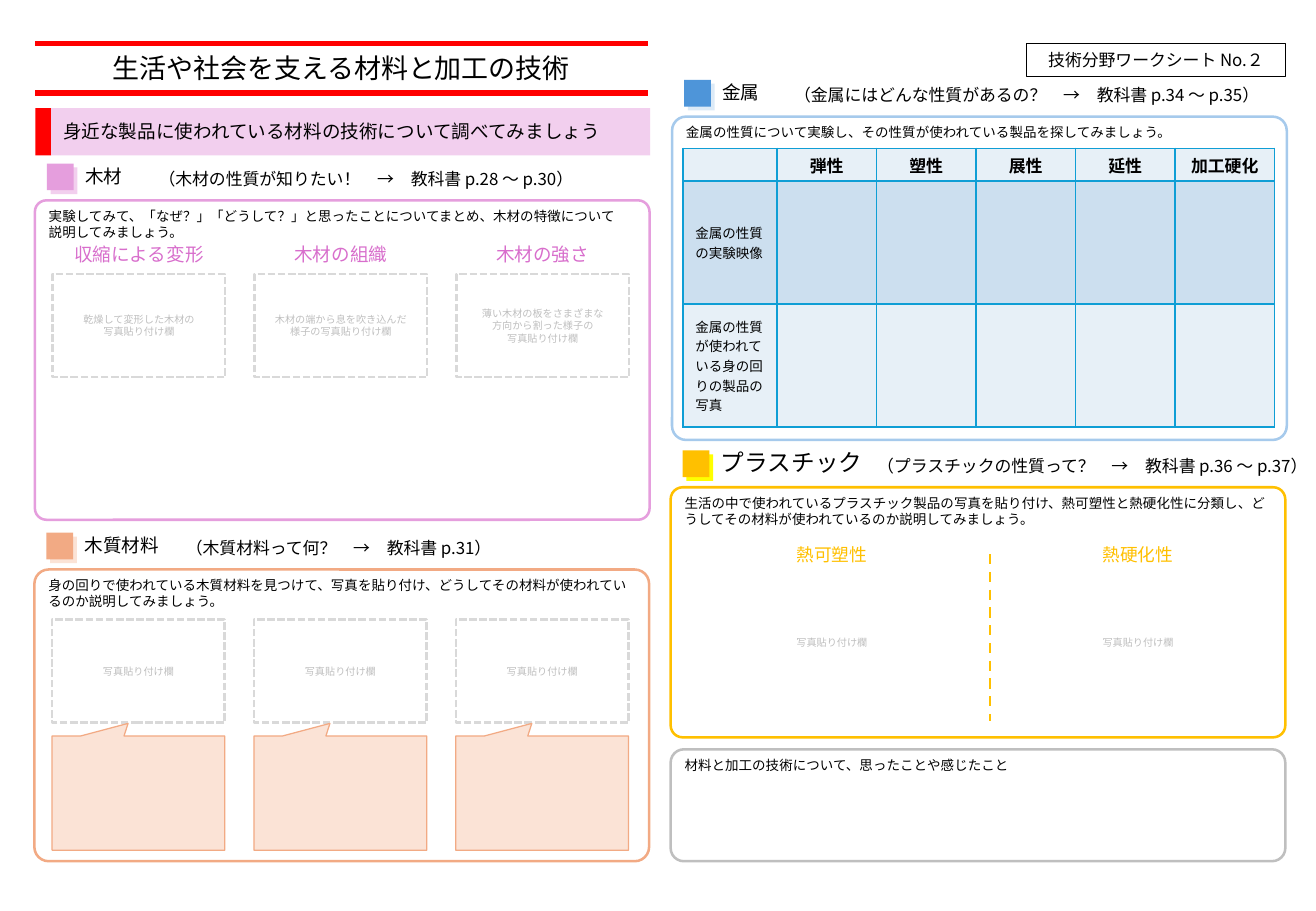
from lxml import etree
from pptx import Presentation
from pptx.dml.color import RGBColor
from pptx.enum.dml import MSO_LINE
from pptx.enum.shapes import MSO_CONNECTOR, MSO_SHAPE
from pptx.enum.text import MSO_ANCHOR, PP_ALIGN
from pptx.oxml.ns import qn
from pptx.util import Cm, Pt

RECT, ROUNDED = MSO_SHAPE.RECTANGLE, MSO_SHAPE.ROUNDED_RECTANGLE
CALLOUT = MSO_SHAPE.RECTANGULAR_CALLOUT
STRAIGHT = MSO_CONNECTOR.STRAIGHT
LEFT, CENTER, RIGHT = PP_ALIGN.LEFT, PP_ALIGN.CENTER, PP_ALIGN.RIGHT
MIDDLE = MSO_ANCHOR.MIDDLE
DASH, SHORT_DASH = MSO_LINE.DASH, MSO_LINE.SQUARE_DOT
FONT, HEADER_FONT = "Noto Sans CJK JP", "Cabin"
COLORS = {
    "black": "000000", "red": "FF0000", "gray": "BFBFBF", "frame": "D9D9D9",
    "wood": "E59EDD", "wood_pale": "F2CFEE", "wood_text": "D86ECC",
    "board": "F2AA84", "board_pale": "FBE3D6",
    "metal": "4E95D9", "metal_pale": "DCEAF7", "metal_line": "A6CAEC",
    "plastic": "FFC000", "plastic_pale": "FFFF00",
    "grid": "0F9ED5", "cell_light": "E7F0F7", "cell_dark": "CCDFEF",
}
PANEL_WIDTH = 12.85
SLOT_INSET, SLOT_PITCH, SLOT_WIDTH, SLOT_HEIGHT = 0.37, 4.22, 3.61, 2.16


def color(name):
    return RGBColor.from_string(COLORS[name])


def add_span(para, text, size, tint="black", font=FONT, bold=False):
    span = para.add_run()
    span.text = text
    span.font.size, span.font.bold, span.font.name = Pt(size), bold, font
    span.font.color.rgb = color(tint)
    etree.SubElement(span.font._element, qn("a:ea"), typeface=FONT)


def write_lines(frame, lines, size, tint, align):
    frame.word_wrap = True
    for index, line in enumerate(lines):
        para = frame.add_paragraph() if index else frame.paragraphs[0]
        para.alignment = align
        para.line_spacing = Pt(size * 1.2)
        add_span(para, line, size, tint)


def add_text(page, left, top, width, height, lines, size, tint="black", align=LEFT):
    box = page.shapes.add_textbox(Cm(left), Cm(top), Cm(width), Cm(height))
    write_lines(box.text_frame, lines, size, tint, align)


def add_box(page, kind, left, top, width, height, fill=None, line=None, weight=1.5):
    box = page.shapes.add_shape(kind, Cm(left), Cm(top), Cm(width), Cm(height))
    box.shadow.inherit = False
    if fill:
        box.fill.solid()
        box.fill.fore_color.rgb = color(fill)
    else:
        box.fill.background()
    if line:
        box.line.color.rgb = color(line)
        box.line.width = Pt(weight)
    else:
        box.line.fill.background()
    return box


def add_line(page, x1, y1, x2, y2, tint, weight):
    line = page.shapes.add_connector(STRAIGHT, Cm(x1), Cm(y1), Cm(x2), Cm(y2))
    line.line.color.rgb = color(tint)
    line.line.width = Pt(weight)
    etree.SubElement(line._element.spPr, qn("a:effectLst"))
    return line


def add_note(page, center, middle, lines):
    """Gray hint centred on a point."""
    height = 0.25 * (len(lines) + 1)
    add_text(page, center - SLOT_WIDTH / 2, middle - height / 2, SLOT_WIDTH, height,
             lines, 6, "gray", CENTER)


def add_photo_slot(page, left, top, lines):
    frame = add_box(page, RECT, left, top, SLOT_WIDTH, SLOT_HEIGHT, line="frame")
    frame.line.dash_style = SHORT_DASH
    add_note(page, left + SLOT_WIDTH / 2, top + SLOT_HEIGHT / 2, lines)


def add_panel(page, left, top, height, line, corner, prompt, prompt_width=12.8):
    panel = add_box(page, ROUNDED, left, top, PANEL_WIDTH, height, line=line)
    panel.adjustments[0] = corner
    add_text(page, left + 0.04, top + 0.03, prompt_width, 0.94, [prompt], 8)


def add_heading(page, left, top, tint, name, width, reference, start, end, size=11):
    """Swatch, name and textbook reference standing above the panel at left, top."""
    add_text(page, left + 0.8, top - 0.6 - size * 0.025, width, 0.74, [name], size)
    add_box(page, RECT, left + 0.33, top - 0.69, 0.56, 0.56, tint + "_pale")
    add_box(page, RECT, left + 0.25, top - 0.77, 0.56, 0.56, tint)
    add_text(page, left + start, top - 0.79, end - start, 0.69, [reference], 10,
             align=RIGHT)


def add_title(page, left, top):
    for offset in (0, 1.04):
        add_line(page, left, top + offset, left + 12.8, top + offset, "red", 3.5)
    add_text(page, left, top + 0.05, 12.8, 0.94, ["生活や社会を支える材料と加工の技術"],
             16, align=CENTER)
    add_box(page, RECT, left, top + 1.35, 0.33, 0.99, "red")
    add_box(page, RECT, left + 0.33, top + 1.35, 12.52, 0.99, "wood_pale")
    add_text(page, left + 0.33, top + 1.48, 12.5, 0.74,
             ["身近な製品に使われている材料の技術について調べてみましょう"], 11)


def add_wood(page, left, top):
    add_heading(page, left, top, "wood", "木材", 1.78,
                "（木材の性質が知りたい！　→　教科書 p.28 ～ p.30）", 1.85, 11.5)
    add_panel(page, left, top, 6.68, "wood", 0.036,
              "実験してみて、「なぜ？」「どうして？」と思ったことについてまとめ、"
              "木材の特徴について説明してみましょう。", 12.6)
    topics = [
        ("収縮による変形", ["乾燥して変形した木材の", "写真貼り付け欄"]),
        ("木材の組織", ["木材の端から息を吹き込んだ", "様子の写真貼り付け欄"]),
        ("木材の強さ", ["薄い木材の板をさまざまな", "方向から割った様子の", "写真貼り付け欄"]),
    ]
    for index, (caption, lines) in enumerate(topics):
        slot = left + SLOT_INSET + index * SLOT_PITCH
        add_text(page, slot, top + 0.76, SLOT_WIDTH, 0.74, [caption], 11, "wood_text", CENTER)
        add_photo_slot(page, slot, top + 1.54, lines)


def add_board(page, left, top):
    add_heading(page, left, top, "board", "木質材料", 2.51,
                "（木質材料って何？　→　教科書 p.31）", 2.62, 9.8)
    add_panel(page, left, top, 6.1, "board", 0.049,
              "身の回りで使われている木質材料を見つけて、写真を貼り付け、"
              "どうしてその材料が使われているのか説明してみましょう。")
    for index in range(3):
        slot = left + SLOT_INSET + index * SLOT_PITCH
        add_photo_slot(page, slot, top + 1.04, ["写真貼り付け欄"])
        callout = add_box(page, CALLOUT, slot, top + 3.48, SLOT_WIDTH, 2.39,
                          "board_pale", "board", 0.75)
        callout.adjustments[0], callout.adjustments[1] = -0.06, -0.61


def style_cell(cell, fill):
    cell.fill.solid()
    cell.fill.fore_color.rgb = color(fill)
    cell.vertical_anchor = MIDDLE
    properties = cell._tc.get_or_add_tcPr()
    for index, side in enumerate(("lnL", "lnR", "lnT", "lnB")):
        border = etree.Element(qn("a:" + side), w=str(Pt(1)))
        solid = etree.SubElement(border, qn("a:solidFill"))
        etree.SubElement(solid, qn("a:srgbClr"), val=COLORS["grid"])
        properties.insert(index, border)


def add_metal_table(page, left, top):
    rows = [
        ["", "弾性", "塑性", "展性", "延性", "加工硬化"],
        ["金属の性質の実験映像"] + [""] * 5,
        ["金属の性質が使われている身の回りの製品の写真"] + [""] * 5,
    ]
    widths, heights = [1.96] + [2.08] * 5, [0.69, 2.57, 2.57]
    table = page.shapes.add_table(3, 6, Cm(left), Cm(top), Cm(sum(widths)),
                                  Cm(sum(heights))).table
    for column, width in zip(table.columns, widths):
        column.width = Cm(width)
    for number, (texts, height) in enumerate(zip(rows, heights)):
        table.rows[number].height = Cm(height)
        for cell, text in zip(table.rows[number].cells, texts):
            style_cell(cell, "cell_dark" if number == 1 else "cell_light")
            para = cell.text_frame.paragraphs[0]
            if number == 0:
                cell.margin_top = cell.margin_bottom = Cm(0.05)
                para.alignment = CENTER
            if not text:
                etree.SubElement(para._p, qn("a:endParaRPr"), sz="800")
            elif number == 0:
                add_span(para, text, 10, font=HEADER_FONT, bold=True)
            else:
                add_span(para, text, 8)


def add_metal(page, left, top):
    add_heading(page, left, top, "metal", "金属", 1.78,
                "（金属にはどんな性質があるの？　→　教科書 p.34 ～ p.35）", 1.88, 12.52)
    add_panel(page, left, top, 6.76, "metal_line", 0.043,
              "金属の性質について実験し、その性質が使われている製品を探してみましょう。")
    add_metal_table(page, left + 0.23, top + 0.66)


def add_plastic(page, left, top):
    add_heading(page, left, top, "plastic", "プラスチック", 3.68,
                "（プラスチックの性質って？　→　教科書 p.36 ～ p.37）", 3.56, 13.56, 14)
    add_panel(page, left, top, 5.23, "plastic", 0.048,
              "生活の中で使われているプラスチック製品の写真を貼り付け、熱可塑性と"
              "熱硬化性に分類し、どうしてその材料が使われているのか説明してみましょう。")
    divider = add_line(page, left + 6.68, top + 1.4, left + 6.68, top + 4.88, "plastic", 1.5)
    divider.line.dash_style = DASH
    for caption, center in (("熱可塑性", left + 3.37), ("熱硬化性", left + 9.77)):
        add_text(page, center - 3.1, top + 1.05, 6.2, 0.71, [caption], 10.5, "plastic", CENTER)
        add_note(page, center, top + 3.24, ["写真貼り付け欄"])


def add_sheet_number(page, left, top):
    box = add_box(page, RECT, left, top, 5.41, 0.69, line="black", weight=0.75)
    box.text_frame.vertical_anchor = MIDDLE
    write_lines(box.text_frame, ["技術分野ワークシート No.２"], 10, "black", CENTER)


def main():
    deck = Presentation()
    deck.slide_width, deck.slide_height = Cm(27.51), Cm(19.05)
    page = deck.slides.add_slide(deck.slide_layouts[6])
    add_title(page, 0.74, 0.91)
    add_wood(page, 0.73, 4.19)
    add_board(page, 0.72, 11.91)
    add_sheet_number(page, 21.46, 0.91)
    add_metal(page, 14.05, 2.44)
    add_plastic(page, 14.02, 10.19)
    add_panel(page, 14.02, 15.67, 2.34, "gray", 0.118,
              "材料と加工の技術について、思ったことや感じたこと")
    deck.save("out.pptx")


if __name__ == "__main__":
    main()
